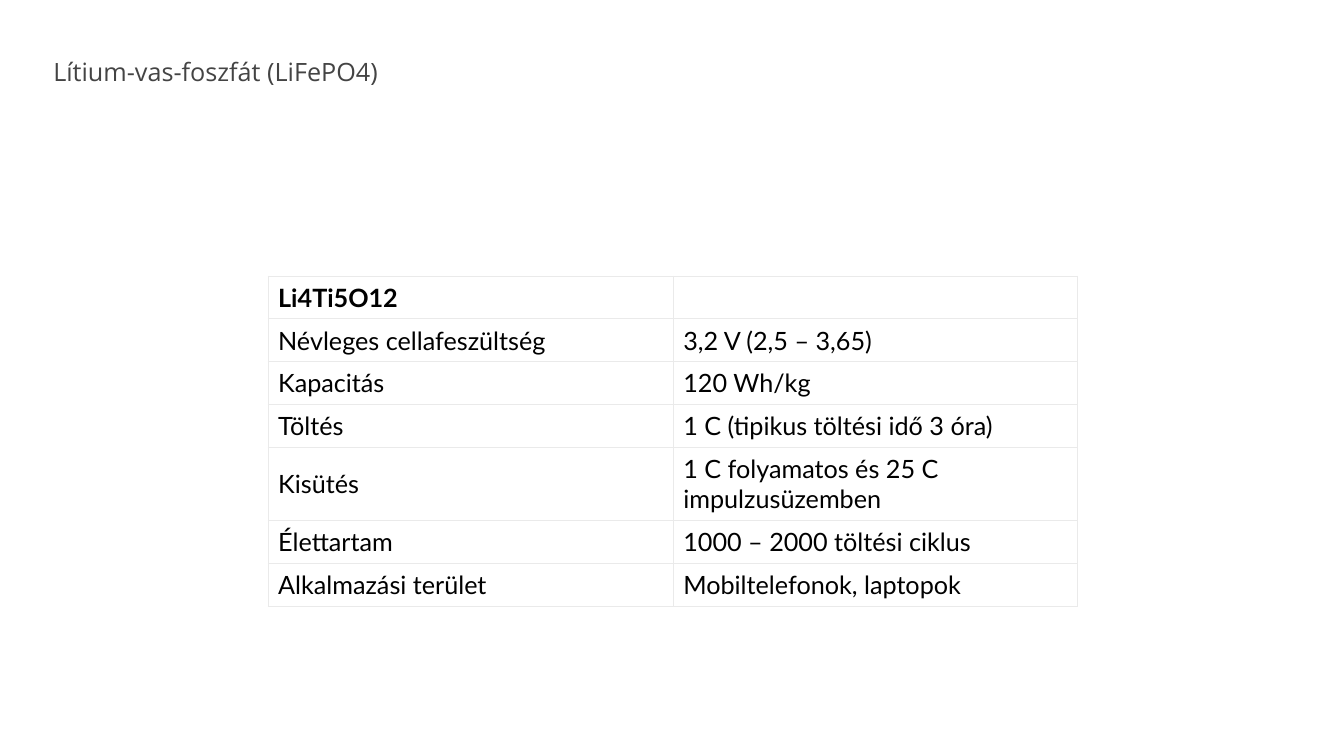
from lxml.etree import SubElement
from pptx import Presentation
from pptx.dml.color import RGBColor
from pptx.enum.text import MSO_ANCHOR, MSO_AUTO_SIZE
from pptx.oxml.ns import qn
from pptx.util import Pt

TITLE = "Lítium-vas-foszfát (LiFePO4)"
ROWS = [
    ("Li4Ti5O12", ""),
    ("Névleges cellafeszültség", "3,2 V (2,5 – 3,65)"),
    ("Kapacitás", "120 Wh/kg"),
    ("Töltés", "1 C (tipikus töltési idő 3 óra)"),
    ("Kisütés", "1 C folyamatos és 25 C impulzusüzemben"),
    ("Élettartam", "1000 – 2000 töltési ciklus"),
    ("Alkalmazási terület", "Mobiltelefonok, laptopok"),
]
THEME = {
    "title": {"name": "Open Sans", "size": Pt(18), "color": "444444"},
    "body": {"name": "Lato", "size": Pt(18), "color": "000000", "bold": False},
    "head": {"name": "Lato", "size": Pt(18), "color": "000000", "bold": True},
    "fill": "FFFFFF",
    "line": "EAEAEA",
}
CELL = {
    "vertical_anchor": MSO_ANCHOR.MIDDLE,
    "margin_left": Pt(7.2),
    "margin_right": Pt(7.2),
    "margin_top": Pt(4.5),
    "margin_bottom": Pt(4.5),
}
WIDTHS = (289.4, 288.7)
SINGLE, DOUBLE = 30.6, 52.2
TALL = {"Kisütés"}


def apply(item, values):
    for key, value in values.items():
        if key == "color":
            item.color.rgb = RGBColor.from_string(value)
        else:
            setattr(item, key, value)


def border(cell):
    props = cell._tc.get_or_add_tcPr()
    for place, side in enumerate(("a:lnL", "a:lnR", "a:lnT", "a:lnB")):
        line = SubElement(props, qn(side), w=str(Pt(0.75)))
        fill = SubElement(line, qn("a:solidFill"))
        SubElement(fill, qn("a:srgbClr"), val=THEME["line"])
        props.insert(place, line)


def add_title(slide):
    box = slide.shapes.add_textbox(Pt(31), Pt(36.7), Pt(247), Pt(28.8))
    frame = box.text_frame
    apply(frame, {"word_wrap": False, "auto_size": MSO_AUTO_SIZE.SHAPE_TO_FIT_TEXT})
    run = frame.paragraphs[0].add_run()
    run.text = TITLE
    apply(run.font, THEME["title"])


def add_data(slide):
    heights = [DOUBLE if row[0] in TALL else SINGLE for row in ROWS]
    table = slide.shapes.add_table(
        len(ROWS), len(WIDTHS), Pt(191.5), Pt(197.2), Pt(sum(WIDTHS)), Pt(sum(heights))
    ).table
    apply(table, {"first_row": False, "horz_banding": False})
    for column, width in zip(table.columns, WIDTHS):
        column.width = Pt(width)
    for index, (texts, height) in enumerate(zip(ROWS, heights)):
        table.rows[index].height = Pt(height)
        for place, text in enumerate(texts):
            cell = table.cell(index, place)
            apply(cell, CELL)
            cell.fill.solid()
            cell.fill.fore_color.rgb = RGBColor.from_string(THEME["fill"])
            border(cell)
            if text:
                run = cell.text_frame.paragraphs[0].add_run()
                run.text = text
                apply(run.font, THEME["body" if index else "head"])


def main():
    deck = Presentation()
    apply(deck, {"slide_width": Pt(960), "slide_height": Pt(540)})
    slide = deck.slides.add_slide(deck.slide_layouts[6])
    add_title(slide)
    add_data(slide)
    deck.save("out.pptx")


if __name__ == "__main__":
    main()
